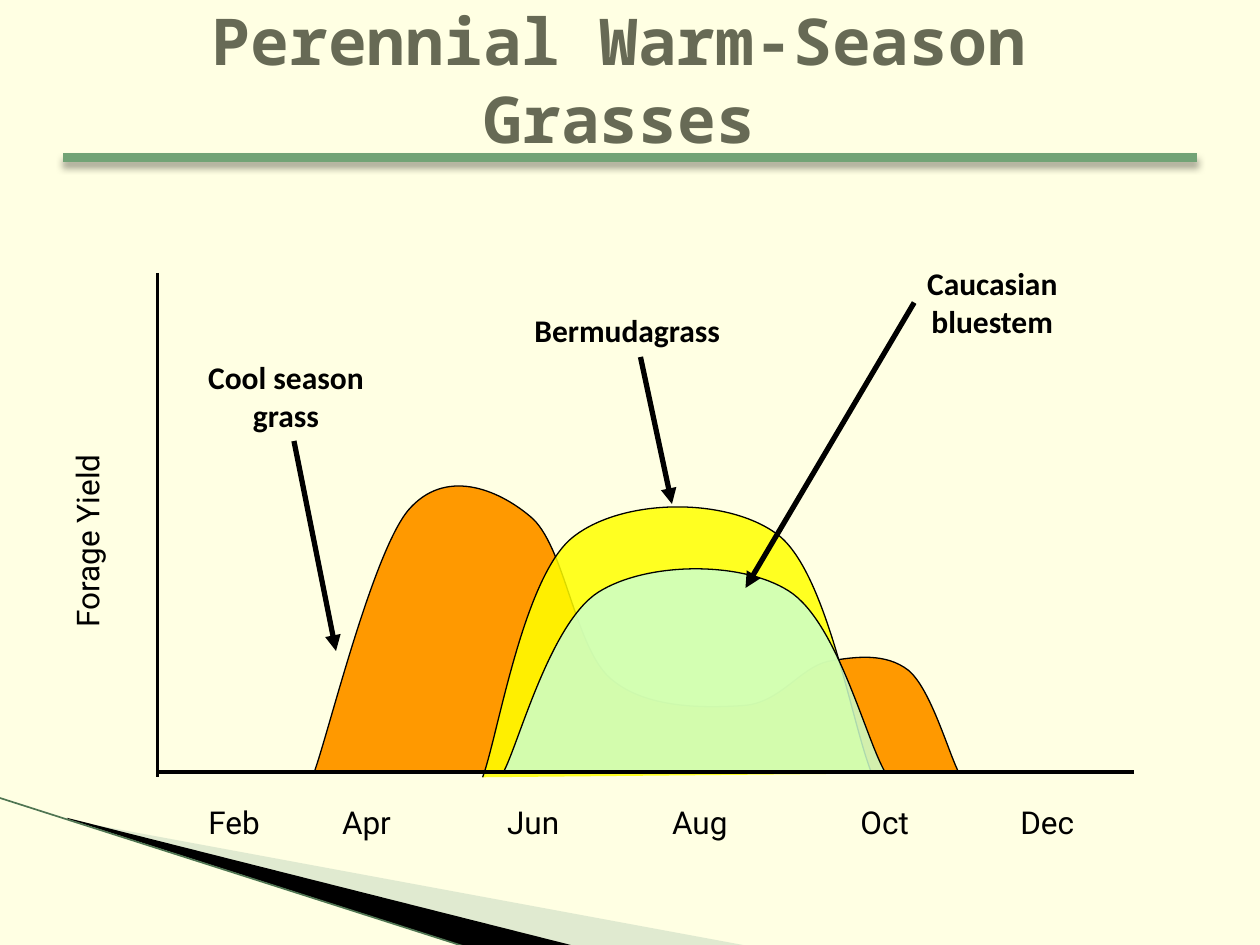
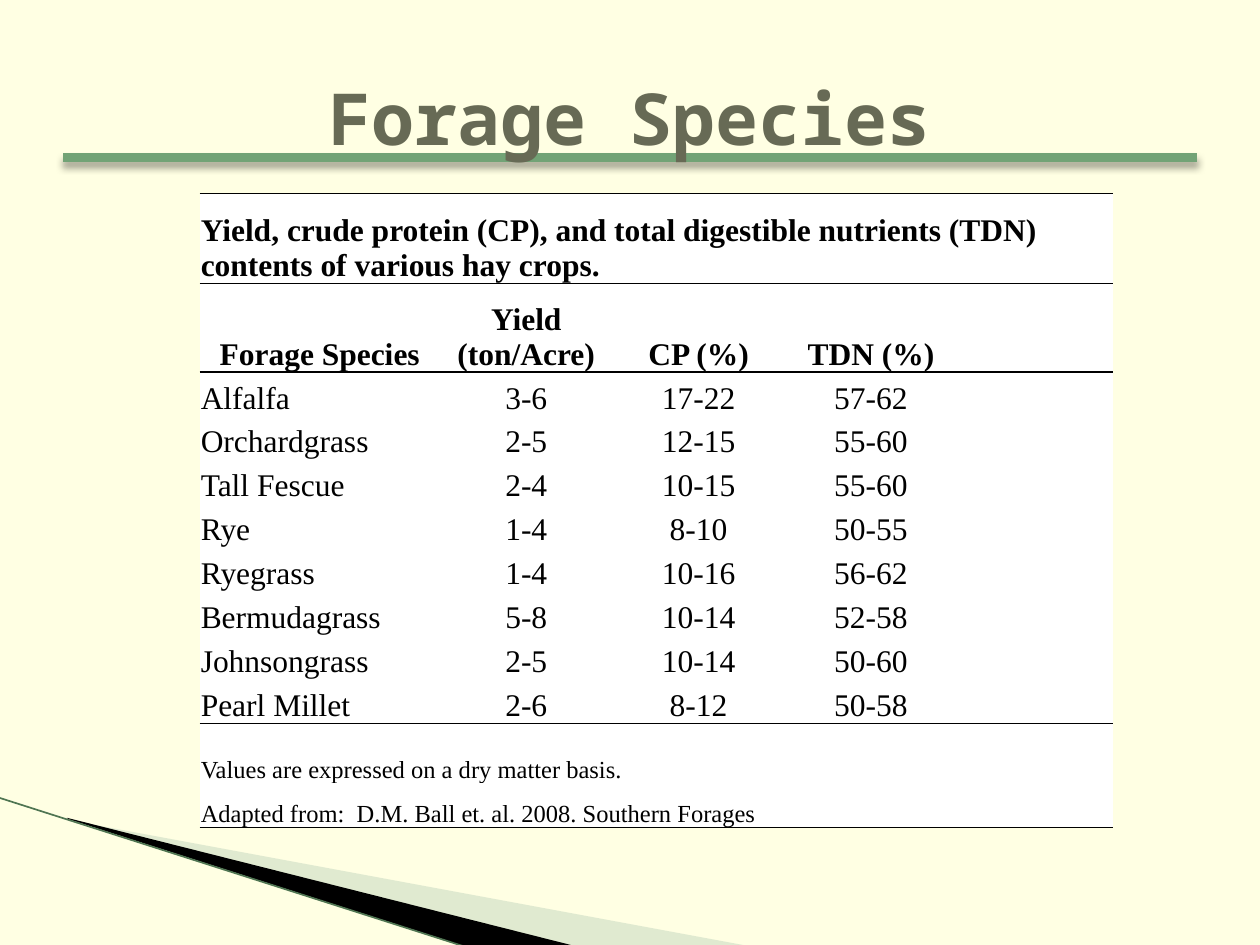
import pptx
import pptx.dml.color
import pptx.enum.shapes
import pptx.enum.text
import pptx.oxml.ns
import pptx.util
from lxml import etree

Pt = pptx.util.Pt
RGBColor = pptx.dml.color.RGBColor
ALIGN = pptx.enum.text.PP_ALIGN
ANCHOR = pptx.enum.text.MSO_ANCHOR
qn = pptx.oxml.ns.qn

# Colours and fonts
CREAM = RGBColor(0xFF, 0xFF, 0xE3)
OLIVE = RGBColor(0x67, 0x6A, 0x55)
GREEN = RGBColor(0x72, 0xA3, 0x76)
DARK_GREEN = RGBColor(0x4F, 0x75, 0x52)
PALE_GREEN = RGBColor(0xB3, 0xCB, 0xB5)
ORANGE = RGBColor(0xFF, 0x99, 0x00)
YELLOW = RGBColor(0xFF, 0xFF, 0x00)
MINT = RGBColor(0xCC, 0xFF, 0xCC)
BLACK = RGBColor(0, 0, 0)
WHITE = RGBColor(0xFF, 0xFF, 0xFF)
TITLE_FONT = "Noto Sans Mono"
AXIS_FONT = "Roboto"
LABEL_FONT = "Calibri"
TABLE_FONT = "Times New Roman"

# Corner wedges: points, fill, opacity in percent, frame
WEDGES = [
    ([(39.6, 468.7), (428.4, 540.7), (328.3, 540.7), (39.6, 468)],
     PALE_GREEN, 40, (56.2, 393.8, 299.5, 113.8)),
    ([(38.2, 467.3), (329, 540.7), (267.8, 541.4), (38.9, 468)],
     BLACK, 100, (-4.3, 455.8, 299.5, 66.2)),
]

# Yield curves: start, then two controls and an end per segment; fill, opacity
YIELD_CURVES = [
    ([(180, 440),
      (188.6, 415.4), (213.1, 316.1), (233.3, 291.6),
      (254.2, 267.1), (284.4, 279.4), (303.1, 295.2),
      (322.6, 311), (328.3, 369.4), (348.5, 387.4),
      (368.6, 405.4), (403.9, 404.6), (424.8, 403.2),
      (445.7, 401.8), (457.2, 381.6), (473, 378),
      (488.9, 375.1), (506.2, 373), (519.1, 383),
      (531.4, 393.1), (541.4, 427.7), (547.2, 440)], ORANGE, 100),
    ([(275.8, 444.2),
      (284.4, 421.2), (298.8, 330.5), (326.9, 307.4),
      (355, 284.4), (416.2, 283.7), (445, 306),
      (473, 328.3), (486.7, 414), (498.2, 442.1)], YELLOW, 85),
    ([(288, 440.6),
      (296.6, 424.1), (314.6, 355.7), (342, 338.4),
      (369.4, 321.1), (423.4, 320.4), (450.7, 337.7),
      (478.1, 355), (493.9, 419.8), (505.4, 440.6)], MINT, 85),
]
AXES = [((90, 156), (90, 444)), ((648, 441.4), (90, 441.4))]

# Month labels: text, left, width
MONTHS = [("Feb", 112, 52.6), ("Apr", 188.4, 50.4), ("Jun", 282.7, 51),
          ("Aug", 377, 55.4), ("Oct", 484.6, 50.4), ("Dec", 576, 54.7)]

# Grass labels: text, box, arrow start (None joins the box's left side), arrow end
GRASS_LABELS = [
    ("Cool season\ngrass", (111.6, 200.9, 103.7, 51), (168, 252), (192, 372)),
    ("Bermudagrass", (297.6, 174.2, 121.7, 29), (366, 204), (384, 288)),
    ("Caucasian\nbluestem", (522.4, 147.4, 89.3, 51), None, (426, 336)),
]

# Hay table
TABLE_CAPTION = ("Yield, crude protein (CP), and total digestible nutrients (TDN) "
                 "contents of various hay crops.")
TABLE_HEADER = ["Forage Species", "Yield (ton/Acre)", "CP (%)", "TDN (%)"]
HAY_CROPS = [
    ["Alfalfa", "3-6", "17-22", "57-62"],
    ["Orchardgrass", "2-5", "12-15", "55-60"],
    ["Tall Fescue", "2-4", "10-15", "55-60"],
    ["Rye", "1-4", "8-10", "50-55"],
    ["Ryegrass", "1-4", "10-16", "56-62"],
    ["Bermudagrass", "5-8", "10-14", "52-58"],
    ["Johnsongrass", "2-5", "10-14", "50-60"],
    ["Pearl Millet", "2-6", "8-12", "50-58"],
]
TABLE_NOTES = ["Values are expressed on a dry matter basis.",
               "Adapted from:  D.M. Ball et. al. 2008. Southern Forages"]
COLUMN_WIDTHS = [137.5, 98.5, 98.5, 98.5, 89]
ROW_HEIGHTS = [51.1, 50.8] + [25.1] * len(HAY_CROPS) + [9.4, 25.1, 25.1]
RULE_WIDTHS = {0: 0.5, 1: 0.5, 2: 1, 10: 0.5, 13: 0.5}  # line above each row index
MERGED_TO_COLUMN = {0: 4, 11: 3, 12: 4}
NO_TABLE_STYLE = "{2D5ABB26-0587-4C30-8999-92F81FD0307C}"


def write_text(frame, text, font, size, color=BLACK, bold=False, align=ALIGN.LEFT):
    """Write one paragraph for each line of text."""
    for index, line in enumerate(text.split("\n")):
        paragraph = frame.add_paragraph() if index else frame.paragraphs[0]
        paragraph.alignment = align
        run = paragraph.add_run()
        run.text = line
        run.font.name, run.font.size, run.font.bold = font, Pt(size), bold
        run.font.color.rgb = color


def add_label(slide, text, box, **text_format):
    label = slide.shapes.add_textbox(*map(Pt, box))
    label.text_frame.word_wrap = False
    label.text_frame.auto_size = pptx.enum.text.MSO_AUTO_SIZE.SHAPE_TO_FIT_TEXT
    write_text(label.text_frame, text, size=18, **text_format)
    return label


def add_title(slide, text, box, size):
    title = slide.shapes.add_textbox(*map(Pt, box))
    title.text_frame.word_wrap = True
    title.text_frame.vertical_anchor = ANCHOR.MIDDLE
    write_text(title.text_frame, text, TITLE_FONT, size, OLIVE, True, ALIGN.CENTER)


def add_line(slide, start, end, color, width, arrow=False):
    line = slide.shapes.add_connector(
        pptx.enum.shapes.MSO_CONNECTOR.STRAIGHT, *map(Pt, start + end))
    line.line.color.rgb = color
    line.line.width = Pt(width)
    properties = line._element.spPr
    if arrow:
        etree.SubElement(properties.find(qn("a:ln")), qn("a:tailEnd"), type="triangle")
    etree.SubElement(properties, qn("a:effectLst"))
    return line


def add_outline(slide, points, fill, opacity, close=True):
    """Draw a filled outline without a line through the points."""
    (x, y), *others = [(Pt(x), Pt(y)) for x, y in points]
    builder = slide.shapes.build_freeform(x, y)
    builder.add_line_segments(others, close=close)
    shape = builder.convert_to_shape()
    shape.shadow.inherit = False
    shape.fill.solid()
    shape.fill.fore_color.rgb = fill
    if opacity < 100:
        color = shape._element.spPr.find(qn("a:solidFill"))[0]
        etree.SubElement(color, qn("a:alpha"), val=str(opacity * 1000))
    shape.line.fill.background()
    return shape


def add_wedge(slide, points, fill, opacity, frame):
    """Draw a wedge whose points reach beyond its frame."""
    shape = add_outline(slide, points, fill, opacity)
    left, top, width, height = map(Pt, frame)
    outline = next(shape._element.iter(qn("a:path")))
    for point in outline.iter(qn("a:pt")):
        point.set("x", str(int(point.get("x")) + shape.left - left))
        point.set("y", str(int(point.get("y")) + shape.top - top))
    outline.set("w", str(width))
    outline.set("h", str(height))
    shape.left, shape.top, shape.width, shape.height = left, top, width, height


def add_curve(slide, points, fill, opacity):
    """Draw an open outline, taking every three points as a Bezier segment."""
    shape = add_outline(slide, points, fill, opacity, close=False)
    shape.line.color.rgb = BLACK
    shape.line.width = Pt(0.75)
    outline = next(shape._element.iter(qn("a:path")))
    segments = outline.findall(qn("a:lnTo"))
    for first in range(0, len(segments), 3):
        curve = etree.SubElement(outline, qn("a:cubicBezTo"))
        for segment in segments[first:first + 3]:
            curve.append(segment[0])
            outline.remove(segment)


def add_base_slide(presentation):
    """Add a blank slide with the background, corner wedges and title rule."""
    slide = presentation.slides.add_slide(presentation.slide_layouts[6])
    slide.background.fill.solid()
    slide.background.fill.fore_color.rgb = CREAM
    for wedge in WEDGES:
        add_wedge(slide, *wedge)
    add_line(slide, (-0.7, 455.8), (267.1, 541.4), DARK_GREEN, 0.95)
    rule = add_line(slide, (36, 90), (684, 90), GREEN, 5)
    shadow = etree.SubElement(
        rule._element.spPr.find(qn("a:effectLst")), qn("a:outerShdw"),
        blurRad=str(Pt(4)), dist=str(Pt(3)), dir="5400000", rotWithShape="0")
    color = etree.SubElement(shadow, qn("a:srgbClr"), val=str(BLACK))
    etree.SubElement(color, qn("a:alpha"), val="35000")
    return slide


def add_cell_rule(cell, tag, width, position):
    """Set one cell border; without a width it is cleared."""
    rule = etree.Element(qn(tag))
    if width:
        rule.set("w", str(Pt(width)))
        fill = etree.SubElement(rule, qn("a:solidFill"))
        etree.SubElement(fill, qn("a:srgbClr"), val=str(BLACK))
    else:
        etree.SubElement(rule, qn("a:noFill"))
    cell._tc.get_or_add_tcPr().insert(position, rule)


def add_hay_table(slide):
    rows = [[TABLE_CAPTION], TABLE_HEADER, *HAY_CROPS, [], *[[note] for note in TABLE_NOTES]]
    table = slide.shapes.add_table(
        len(rows), len(COLUMN_WIDTHS), Pt(114), Pt(110.6),
        Pt(sum(COLUMN_WIDTHS)), Pt(sum(ROW_HEIGHTS))).table
    table.first_row = table.horz_banding = False
    table._tbl.tblPr[0].text = NO_TABLE_STYLE
    for column, width in zip(table.columns, COLUMN_WIDTHS):
        column.width = Pt(width)
    for row_index, (texts, height) in enumerate(zip(rows, ROW_HEIGHTS)):
        table.rows[row_index].height = Pt(height)
        for column_index in range(len(COLUMN_WIDTHS)):
            cell = table.cell(row_index, column_index)
            cell.margin_left = cell.margin_right = cell.margin_top = Pt(0.72)
            cell.margin_bottom = 0
            cell.vertical_anchor = ANCHOR.BOTTOM
            cell.fill.solid()
            cell.fill.fore_color.rgb = WHITE
            for position, tag in enumerate(("a:lnT", "a:lnB")):
                add_cell_rule(cell, tag, RULE_WIDTHS.get(row_index + position), position)
            if column_index < len(texts):
                centred = column_index > 0 or row_index == 1
                write_text(cell.text_frame, texts[column_index], TABLE_FONT,
                           size=14 if row_index > 10 else 18, bold=row_index < 2,
                           align=ALIGN.CENTER if centred else ALIGN.LEFT)
            else:
                # Small empty text keeps the spacer row low
                paragraph = cell.text_frame.paragraphs[0]._p
                etree.SubElement(paragraph, qn("a:endParaRPr"), sz="600")
    for row_index, last_column in MERGED_TO_COLUMN.items():
        table.cell(row_index, 0).merge(table.cell(row_index, last_column))


def build_yield_slide(presentation):
    slide = add_base_slide(presentation)
    add_title(slide, "Perennial Warm-Season Grasses", (48, 0, 612, 90), 36.9)

    # Curves and axes
    for curve in YIELD_CURVES:
        add_curve(slide, *curve)
    for start, end in AXES:
        add_line(slide, start, end, BLACK, 2.25)

    # Axis labels
    for month, left, width in MONTHS:
        add_label(slide, month, (left, 455.4, width, 36), font=AXIS_FONT)
    axis_title = add_label(slide, "Forage Yield", (-19.4, 275, 145.4, 36), font=AXIS_FONT)
    axis_title.rotation = 270

    # Grass labels and arrows
    for text, box, start, end in GRASS_LABELS:
        label = add_label(slide, text, box, font=LABEL_FONT, bold=True, align=ALIGN.CENTER)
        arrow = add_line(slide, start or box[:2], end, BLACK, 3, arrow=True)
        if start is None:
            arrow.begin_connect(label, 1)


def build_table_slide(presentation):
    slide = add_base_slide(presentation)
    add_hay_table(slide)
    add_title(slide, "Forage Species", (36, 21.6, 648, 90), 41)


def main():
    presentation = pptx.Presentation()
    presentation.slide_width, presentation.slide_height = Pt(720), Pt(540)
    build_yield_slide(presentation)
    build_table_slide(presentation)
    presentation.save("out.pptx")


if __name__ == "__main__":
    main()
